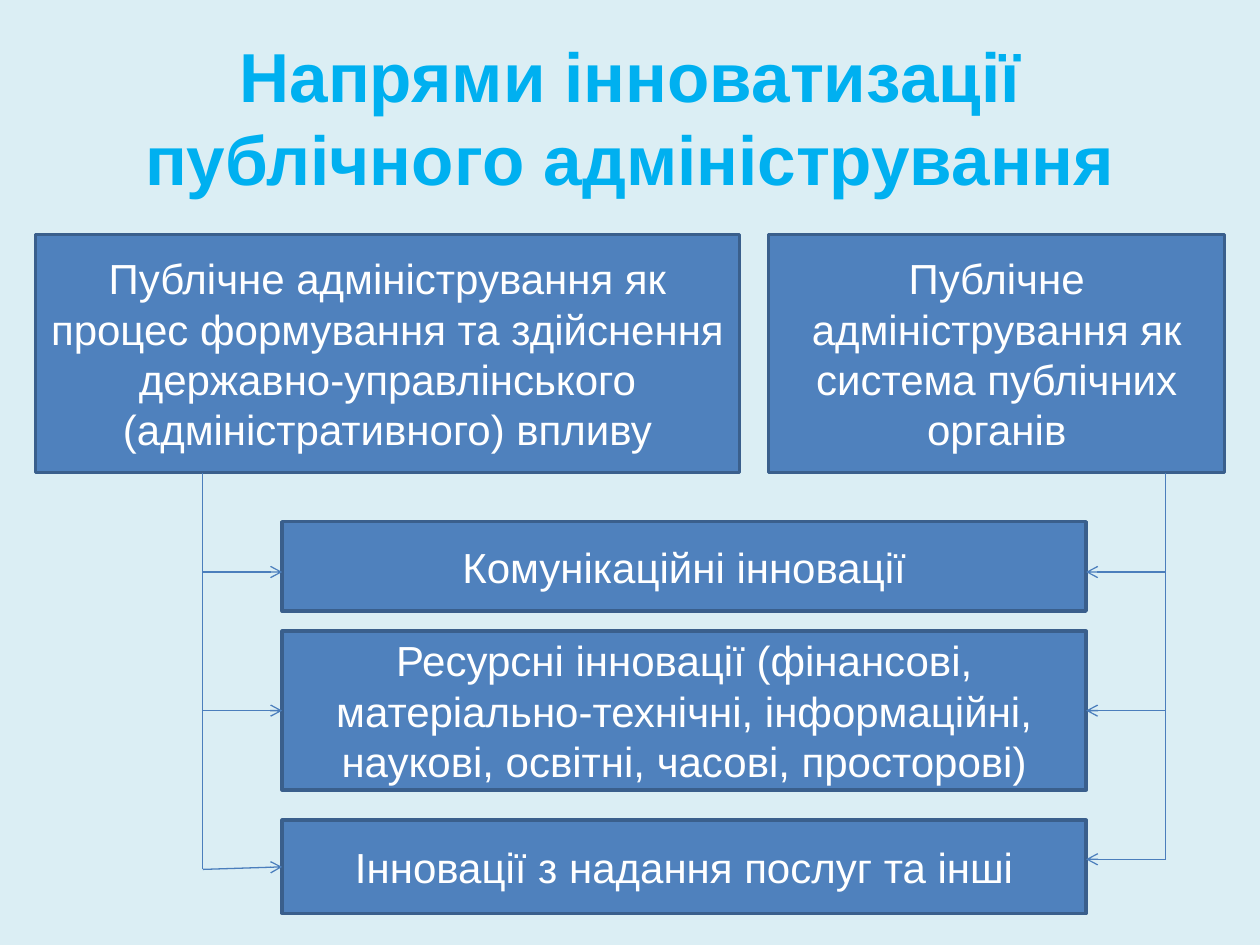
from pptx import Presentation
from pptx.dml.color import RGBColor
from pptx.enum.shapes import MSO_CONNECTOR, MSO_SHAPE
from pptx.enum.text import MSO_ANCHOR, PP_ALIGN
from pptx.oxml.ns import qn
from pptx.util import Pt
from lxml import etree

RECT = MSO_SHAPE.RECTANGLE
STRAIGHT = MSO_CONNECTOR.STRAIGHT
MIDDLE = MSO_ANCHOR.MIDDLE
CENTER = PP_ALIGN.CENTER
TITLE_ONLY = 5
LEFT_SIDE, RIGHT_SIDE = 1, 3

TOP_Y, TOP_H = 133.92, 136.08
BOX_X, BOX_W = 161.28, 459.36
LEFT_X, RIGHT_X = 115.92, 666

APPROACHES = [
    (20.16, 402.48, 0, [
        "Публічне адміністрування як процес формування та здійснення",
        "державно-управлінського",
        "(адміністративного) впливу",
    ]),
    (439.2, 260.64, 7.2, [
        "Публічне адміністрування як",
        "система публічних органів",
    ]),
]

INNOVATIONS = [
    (298.08, 51.12, ["Комунікаційні інновації"]),
    (360.72, 90.72, [
        "Ресурсні інновації (фінансові, матеріально-технічні, інформаційні,",
        "наукові, освітні, часові, просторові)",
    ]),
    (468.72, 53.28, ["Інновації з надання послуг та інші"]),
]


def rgb(value):
    return RGBColor.from_string(value)


def format_text(tf, size, color, bold=False):
    tf.word_wrap = True
    tf.vertical_anchor = MIDDLE
    for p in tf.paragraphs:
        p.alignment = CENTER
        for r in p.runs:
            r.font.name = "Arial"
            r.font.size = Pt(size)
            r.font.bold = bold
            r.font.color.rgb = rgb(color)


def set_title(s, text):
    sp = s.shapes.title
    sp.left, sp.top, sp.width, sp.height = Pt(36), Pt(21.6), Pt(648), Pt(90)
    sp.text_frame.text = text
    format_text(sp.text_frame, 39.6, "00B0F0", True)


def add_box(s, x, y, w, h, lines, inset=7.2):
    sp = s.shapes.add_shape(RECT, Pt(x), Pt(y), Pt(w), Pt(h))
    sp.shadow.inherit = False
    sp.fill.solid()
    sp.fill.fore_color.rgb = rgb("4F81BD")
    sp.line.color.rgb = rgb("3A5F8C")
    sp.line.width = Pt(2)
    tf = sp.text_frame
    tf.margin_left = tf.margin_right = Pt(inset)
    tf.margin_top = tf.margin_bottom = Pt(inset / 2)
    tf.text = "\n".join(lines)
    format_text(tf, 24, "FFFFFF")
    return sp


def add_line(s, x1, y1, x2, y2, arrow=False):
    cxn = s.shapes.add_connector(STRAIGHT, Pt(x1), Pt(y1), Pt(x2), Pt(y2))
    cxn.line.color.rgb = rgb("4B7EBC")
    cxn.line.width = Pt(0.75)
    if arrow:
        etree.SubElement(cxn.line._get_or_add_ln(), qn("a:tailEnd"), type="arrow")
    etree.SubElement(cxn._element.spPr, qn("a:effectLst"))
    return cxn


def add_branches(s, boxes, trunk_x, edge_x, side, first_y, last_y, end_y):
    add_line(s, trunk_x, TOP_Y + TOP_H, trunk_x, end_y)
    middle_y = 406.08
    add_line(s, trunk_x, first_y, edge_x, first_y, True)
    middle = add_line(s, trunk_x, middle_y, edge_x, middle_y, True)
    middle.end_connect(boxes[1], side)
    return add_line(s, trunk_x, end_y, edge_x, last_y, True)


def main():
    prs = Presentation()
    prs.slide_width, prs.slide_height = Pt(720), Pt(540)
    s = prs.slides.add_slide(prs.slide_layouts[TITLE_ONLY])
    s.background.fill.solid()
    s.background.fill.fore_color.rgb = rgb("DBEEF4")

    set_title(s, "Напрями інноватизації публічного адміністрування")
    for x, w, inset, lines in APPROACHES:
        add_box(s, x, TOP_Y, w, TOP_H, lines, inset)
    boxes = [add_box(s, BOX_X, y, BOX_W, h, lines) for y, h, lines in INNOVATIONS]

    last_left = add_branches(s, boxes, LEFT_X, BOX_X, LEFT_SIDE, 326.88, 495.36, 496.8)
    last_left.end_connect(boxes[2], LEFT_SIDE)
    add_branches(s, boxes, RIGHT_X, BOX_X + BOX_W, RIGHT_SIDE, 326.88, 491.04, 491.04)

    prs.save("out.pptx")


if __name__ == "__main__":
    main()
